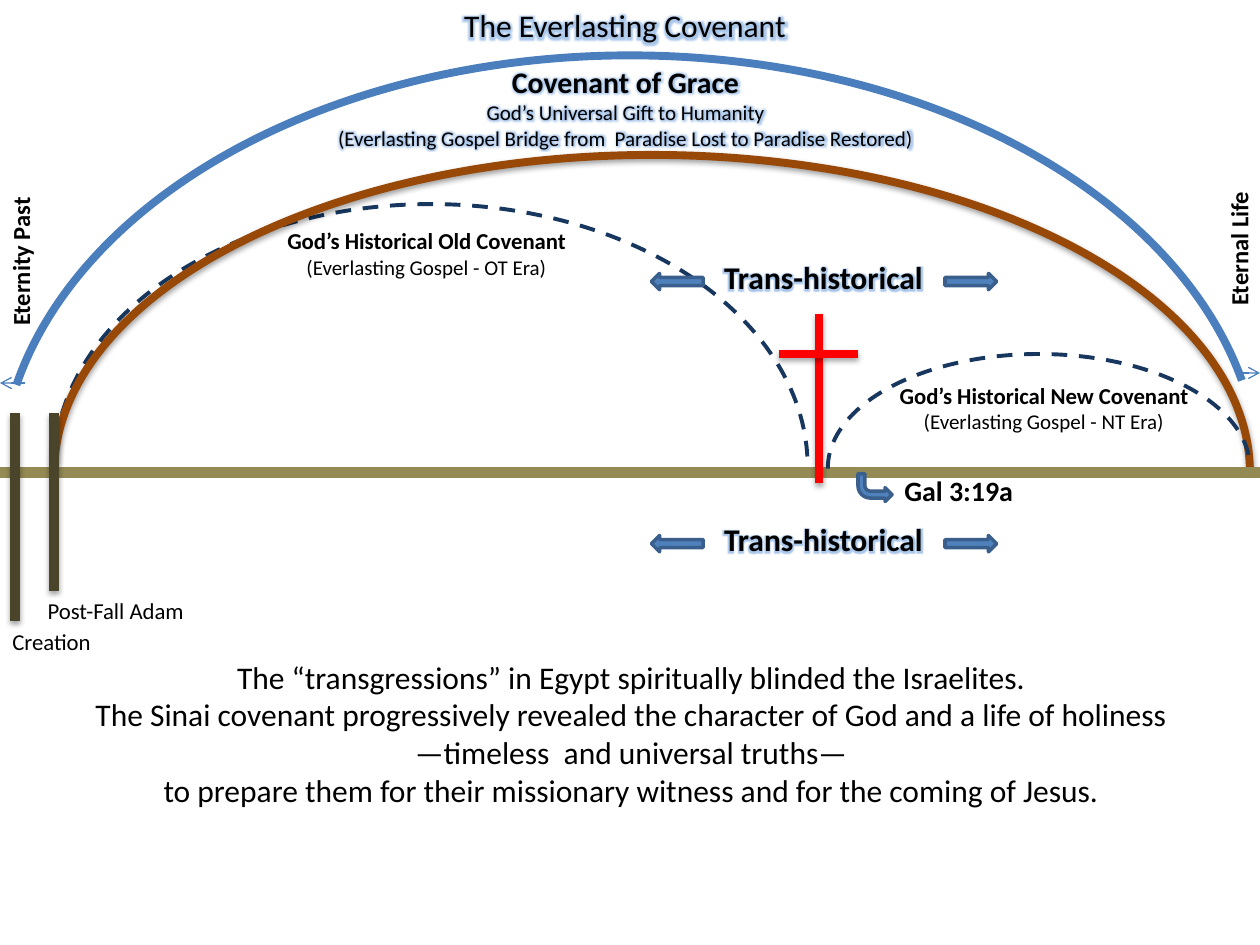
from lxml import etree
from pptx import Presentation, util as u
from pptx.dml.color import RGBColor
from pptx.enum import dml, shapes, text
from pptx.oxml import parse_xml
from pptx.oxml.ns import nsdecls, qn

NAVY, BLUE, BROWN = "17375E", "4B7EBC", "984807"
OLIVE, DARK_OLIVE, RED = "948A54", "4A452A", "FF0000"
ARROW_FILL, ARROW_LINE, GLOW, BLACK = "4F81BD", "3A5F8C", "8EB4E3", "000000"


def color(value):
    return RGBColor.from_string(value)


class Board:
    """Style and element builders for one slide."""
    font = "Calibri"

    def __init__(self, slide):
        self.s = slide

    def box(self, at):
        return [u.Inches(v) for v in at]

    def stroke(self, sp, hex_color, width, dash=False):
        sp.line.color.rgb = color(hex_color)
        sp.line.width = u.Pt(width)
        if dash:
            sp.line.dash_style = dml.MSO_LINE.DASH

    def effects(self, sp, alpha=None, dist=1.8):
        """Replace the theme shadow with a soft one, or with none."""
        spPr = sp._element.spPr
        for old in spPr.findall(qn("a:effectLst")):
            spPr.remove(old)
        shadow = ""
        if alpha:
            shadow = (f'<a:outerShdw blurRad="{u.Pt(3.1)}" dist="{u.Pt(dist)}" '
                      f'dir="5400000" rotWithShape="0"><a:srgbClr val="{BLACK}">'
                      f'<a:alpha val="{alpha * 1000}"/></a:srgbClr></a:outerShdw>')
        spPr.append(parse_xml(f'<a:effectLst {nsdecls("a")}>{shadow}</a:effectLst>'))

    def arc(self, at, start, end, hex_color, width, dash=False, alpha=None):
        sp = self.s.shapes.add_shape(shapes.MSO_SHAPE.ARC, *self.box(at))
        sp.adjustments[0], sp.adjustments[1] = start, end
        sp.fill.background()
        self.stroke(sp, hex_color, width, dash)
        self.effects(sp, alpha, 1.6)

    def line(self, ends, hex_color, width, alpha=None, arrow=False):
        sp = self.s.shapes.add_connector(shapes.MSO_CONNECTOR.STRAIGHT, *self.box(ends))
        self.stroke(sp, hex_color, width)
        if arrow:
            etree.SubElement(sp.line._get_or_add_ln(), qn("a:tailEnd"), type="arrow")
        self.effects(sp, alpha)

    def block_arrow(self, kind, at, flip=False, rotation=0):
        sp = self.s.shapes.add_shape(kind, *self.box(at))
        sp.fill.solid()
        sp.fill.fore_color.rgb = color(ARROW_FILL)
        self.stroke(sp, ARROW_LINE, 2)
        sp.shadow.inherit = False
        sp.rotation = rotation
        if flip:
            sp._element.spPr.xfrm.set("flipH", "1")

    def set_lines(self, sp, lines, center=True, glow=False):
        """Fill a text shape with (wording, size, bold) lines."""
        tf = sp.text_frame
        tf.word_wrap = True
        tf.auto_size = text.MSO_AUTO_SIZE.SHAPE_TO_FIT_TEXT
        tf.vertical_anchor = text.MSO_ANCHOR.TOP
        tf.text = "\n".join(wording for wording, _, _ in lines)
        for p, (_, size, bold) in zip(tf.paragraphs, lines):
            p.alignment = text.PP_ALIGN.CENTER if center else text.PP_ALIGN.LEFT
            r = p.runs[0]
            r.font.size, r.font.bold = u.Pt(size), bold
            r.font.color.rgb = color(BLACK)
            if glow:
                r.font._element.append(parse_xml(
                    f'<a:effectLst {nsdecls("a")}><a:glow rad="{u.Pt(5)}">'
                    f'<a:srgbClr val="{GLOW}"><a:alpha val="75000"/></a:srgbClr>'
                    f'</a:glow></a:effectLst>'))
            r.font.name = self.font

    def label(self, at, lines, center=True, glow=False, rotation=0):
        sp = self.s.shapes.add_textbox(*self.box(at))
        self.set_lines(sp, lines, center, glow)
        sp.rotation = rotation

    def title(self, at, wording, size):
        sp = self.s.shapes.title
        sp.left, sp.top, sp.width, sp.height = self.box(at)
        self.set_lines(sp, [(wording, size, False)], glow=True)


def main():
    prs = Presentation()
    prs.slide_width, prs.slide_height = u.Inches(10), u.Inches(7.5)
    b = Board(prs.slides.add_slide(prs.slide_layouts[5]))

    b.title((3.19, 0, 3.54, 0.68), "The Everlasting Covenant", 18)

    # Old covenant and grace arcs over the time line
    b.arc((0.43, 1.62, 5.98, 4.17), 107.9, 0, NAVY, 2.25, dash=True)
    b.arc((0.43, 1.23, 9.49, 5.04), 108.53, 215.93, BROWN, 4.5, alpha=38)
    b.line((0, 3.75, 10, 3.75), OLIVE, 6)

    # Arrows out to eternity
    b.line((0.2, 3.04, 0, 3.04), BLUE, 0.75, arrow=True)
    b.line((9.8, 2.96, 10, 2.96), BLUE, 0.75, arrow=True)

    # Fall and creation posts
    for x, bottom in ((0.43, 4.69), (0.12, 4.93)):
        b.line((x, 3.28, x, bottom), DARK_OLIVE, 6, alpha=35)

    # New covenant arc
    b.arc((6.57, 2.81, 3.35, 1.81), 107.9, 215.37, NAVY, 2.25, dash=True)

    # Covenant eras
    for at, name, era in (((1.93, 1.75, 2.91, 0.52), "Old", "OT"),
                          ((6.57, 2.98, 3.43, 0.52), "New", "NT")):
        b.label(at, [(f"God’s Historical {name} Covenant", 13, True),
                     (f"(Everlasting Gospel - {era} Era)", 12, False)])

    # Post captions and the two ends of time
    b.label((0, 4.93, 1.3, 0.32), [("Creation", 13, False)], center=False)
    b.label((0.28, 4.69, 1.97, 0.32), [("Post-Fall Adam", 13, False)], center=False)
    for x, y, wording in ((-0.72, 1.63, "Eternity Past"), (8.95, 1.47, "Eternal Life")):
        b.label((x, y, 1.77, 0.34), [(wording, 14, True)], center=False, rotation=270)

    # Everlasting covenant arc
    b.arc((0, 0.44, 10, 6.77), 113.39, 210.35, BLUE, 4.5)

    # Cross
    b.line((6.5, 3.83, 6.5, 2.49), RED, 4.5, alpha=35)
    b.line((6.18, 2.81, 6.81, 2.81), RED, 4.5, alpha=35)

    b.label((2.01, 0.46, 5.91, 0.79), [
        ("Covenant of Grace", 17, True),
        ("God’s Universal Gift to Humanity", 12, False),
        ("(Everlasting Gospel Bridge from  Paradise Lost to Paradise Restored)", 12, False),
    ], glow=True)

    # Trans-historical labels between outward arrows
    for top in (2, 4.08):
        b.label((5.37, top, 2.33, 0.4), [("Trans-historical", 18, True)], glow=True)
        for x, flip in ((5.17, True), (7.5, False)):
            b.block_arrow(shapes.MSO_SHAPE.RIGHT_ARROW, (x, top + 0.17, 0.41, 0.13), flip)

    # Scripture reference
    b.block_arrow(shapes.MSO_SHAPE.BENT_ARROW, (6.81, 3.76, 0.27, 0.22), True, 180)
    b.label((7.08, 3.71, 1.83, 0.37), [("Gal 3:19a", 16, True)], center=False)

    # Closing statement
    b.label((0.12, 5.17, 9.78, 1.31), [(wording, 18, False) for wording in (
        "The “transgressions” in Egypt spiritually blinded the Israelites.",
        "The Sinai covenant progressively revealed the character of God and a life of holiness",
        "—timeless  and universal truths—",
        "to prepare them for their missionary witness and for the coming of Jesus.")])

    prs.save("out.pptx")


if __name__ == "__main__":
    main()
